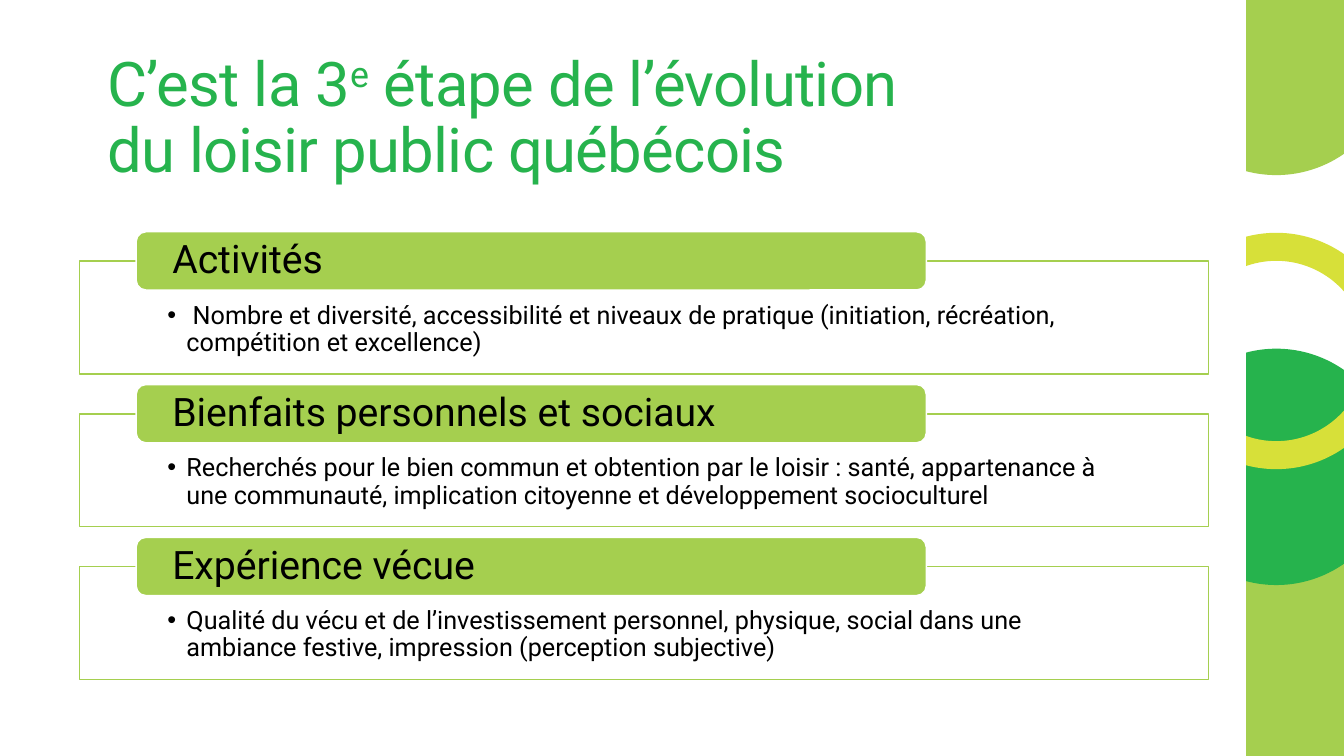
import pptx
import pptx.util
import pptx.dml.color
import pptx.enum.shapes
import pptx.enum.text
import pptx.oxml
import pptx.oxml.ns

Cm = pptx.util.Cm
Pt = pptx.util.Pt
KIND = pptx.enum.shapes.MSO_SHAPE
ANCHOR = pptx.enum.text.MSO_ANCHOR
LEFT = pptx.enum.text.PP_ALIGN.LEFT
LIME, GREEN, YELLOW, WHITE, BLACK = "A5CF4F", "26B34D", "D7E039", "FFFFFF", "000000"
WIDE, HIGH = 33.87, 19.05
CARDS = [
    ("Activités",
     " Nombre et diversité, accessibilité et niveaux de pratique "
     "(initiation, récréation, compétition et excellence)"),
    ("Bienfaits personnels et sociaux",
     "Recherchés pour le bien commun et obtention par le loisir : santé, appartenance à "
     "une communauté, implication citoyenne et développement socioculturel"),
    ("Expérience vécue",
     "Qualité du vécu et de l’investissement personnel, physique, social dans une "
     "ambiance festive, impression (perception subjective)"),
]


def tint(code):
    """Return the colour of a hex string."""
    return pptx.dml.color.RGBColor.from_string(code)


def shape(slide, kind, box, fill=None, line=None, weight=1.1):
    """Add a flat shape in a box of left, top, width and height."""
    item = slide.shapes.add_shape(kind, *map(Cm, box))
    item.shadow.inherit = False
    if fill:
        item.fill.solid()
        item.fill.fore_color.rgb = tint(fill)
    else:
        item.fill.background()
    if line:
        item.line.color.rgb = tint(line)
        item.line.width = Pt(weight)
    else:
        item.line.fill.background()
    return item


def setup(frame, anchor, pads):
    """Set wrap, anchor and insets, and return the first paragraph."""
    frame.word_wrap = True
    frame.vertical_anchor = anchor
    (frame.margin_left, frame.margin_top,
     frame.margin_right, frame.margin_bottom) = map(Cm, pads)
    para = frame.paragraphs[0]
    para.alignment = LEFT
    para.line_spacing = 0.9
    para.space_before = Pt(0)
    return para


def write(para, text, size, code):
    """Add one run to a paragraph."""
    run = para.add_run()
    run.text = text
    run.font.name = "Roboto"
    run.font.size = Pt(size)
    run.font.color.rgb = tint(code)
    return run


def bullet(para, hang):
    """Give a paragraph a round bullet with a hanging indent."""
    props = para._p.get_or_add_pPr()
    props.set("marL", str(Cm(hang)))
    props.set("indent", str(-Cm(hang)))
    space = pptx.oxml.ns.nsdecls("a")
    props.append(pptx.oxml.parse_xml(f'<a:buFont {space} typeface="Arial"/>'))
    props.append(pptx.oxml.parse_xml(f'<a:buChar {space} char="•"/>'))


def border(slide, left, width):
    """Draw the band of circles along the right edge."""
    size = 5.25
    ring = left - 1.86

    def block(top, base, code):
        shape(slide, KIND.RECTANGLE, (left, top, width, base - top), code)

    def disc(top, code, fill=None):
        shape(slide, KIND.OVAL, (ring, top, size, size), fill, code, 20)

    block(14.1, HIGH, LIME)
    disc(-1.19, LIME)
    block(0, 3.73, LIME)
    block(11.13, 14.1, GREEN)
    disc(9.14, GREEN, GREEN)
    disc(6.22, YELLOW)
    shape(slide, KIND.RECTANGLE, (left - 2.46, 0, 2.46, HIGH), WHITE)


def heading(slide, box):
    """Place and fill the title."""
    title = slide.shapes.title
    title.left, title.top, title.width, title.height = map(Cm, box)
    para = setup(title.text_frame, ANCHOR.BOTTOM, (0.25, 0.13, 0.25, 0.13))
    for text, base in (("C’est la 3", 0), ("e", 30000),
                       (" étape de l’évolution ", 0), (None, 0),
                       ("du loisir public québécois", 0)):
        if text is None:
            para.add_line_break()
            continue
        props = write(para, text, 44, GREEN).font._element
        props.set("spc", "-50")
        if base:
            props.set("baseline", str(base))


def card(slide, box, label, detail):
    """Draw a framed text with its label across the top edge."""
    left, top, width, height = box
    frame = shape(slide, KIND.RECTANGLE, box, WHITE, LIME)
    para = setup(frame.text_frame, ANCHOR.TOP, (2.21, 1.04, 2.21, 0.36))
    bullet(para, 0.48)
    write(para, detail, 18, BLACK)
    tab = shape(slide, KIND.ROUNDED_RECTANGLE,
                (left + 1.42, top - 0.74, width * 0.7, 1.47), LIME, WHITE)
    para = setup(tab.text_frame, ANCHOR.MIDDLE, (0.84, 0, 0.84, 0))
    write(para, label, 28, BLACK)


def main():
    """Build the slide and save it."""
    deck = pptx.Presentation()
    deck.slide_width, deck.slide_height = Cm(WIDE), Cm(HIGH)
    slide = deck.slides.add_slide(deck.slide_layouts[5])
    border(slide, 31.4, WIDE - 31.4)
    heading(slide, (2.46, 1.14, 27.53, 3.68))
    for row, (label, detail) in enumerate(CARDS):
        card(slide, (2.01, 6.58 + row * 3.85, 28.45, 2.84), label, detail)
    deck.save("out.pptx")


if __name__ == "__main__":
    main()
